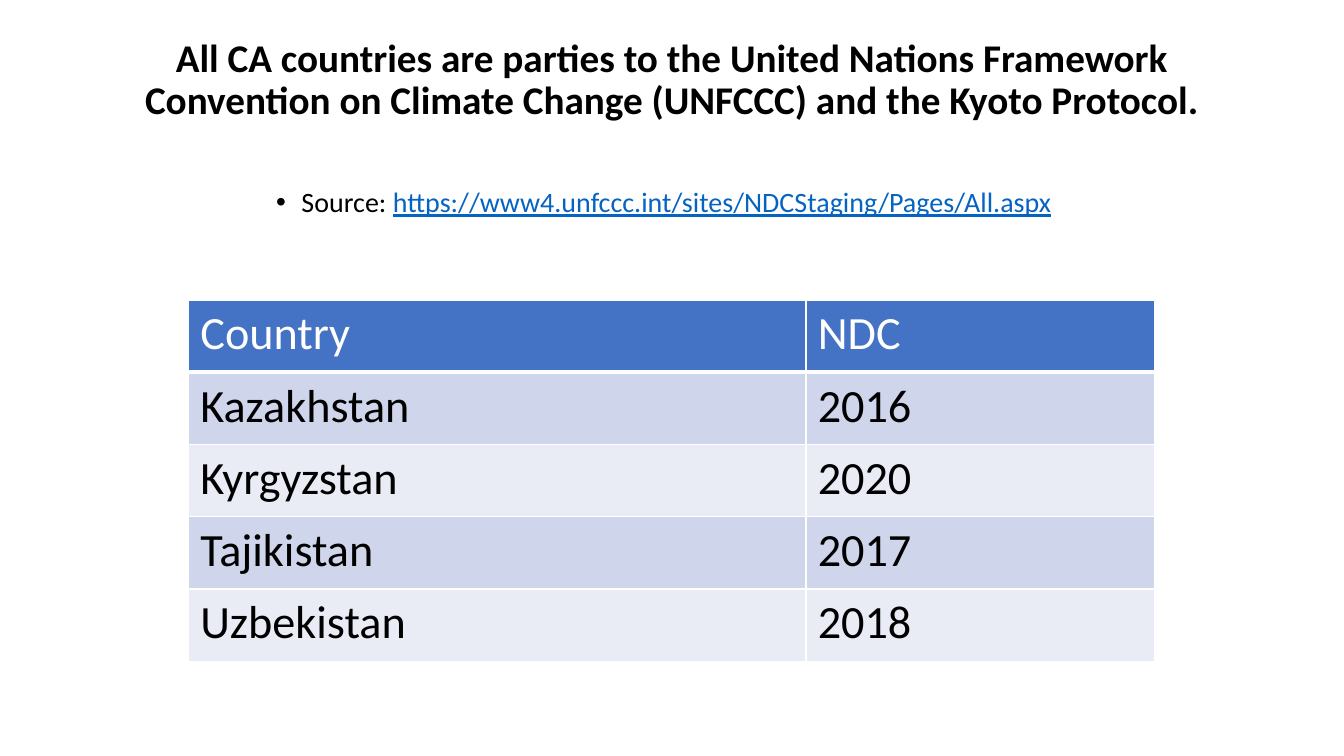
from dataclasses import dataclass

from lxml.etree import SubElement
from pptx import Presentation
from pptx.dml.color import RGBColor as RGB
from pptx.enum.text import MSO_ANCHOR as Anchor, MSO_AUTO_SIZE as AutoSize, PP_ALIGN as Align
from pptx.oxml.ns import qn
from pptx.util import Cm, Pt

TITLE = ("All CA countries are parties to the United Nations Framework "
         "Convention on Climate Change (UNFCCC) and the Kyoto Protocol.")
SOURCE = ("Source: ", "https://www4.unfccc.int/sites/NDCStaging/Pages/All.aspx")
ROWS = [
    ("Country", "NDC"),
    ("Kazakhstan", "2016"),
    ("Kyrgyzstan", "2020"),
    ("Tajikistan", "2017"),
    ("Uzbekistan", "2018"),
]


@dataclass(frozen=True)
class Theme:
    font: str = "Calibri"
    title_size: int = 28
    source_size: int = 20
    table_size: int = 33
    text: str = "000000"
    link: str = "0563C1"
    white: str = "FFFFFF"
    header: str = "4472C4"
    bands: tuple = ("CFD5EA", "E9EBF5")


THEME = Theme()
TEXT_LEFT, TEXT_WIDTH = 2.79, 28.27
TABLE_LEFT, TABLE_TOP = 4.75, 7.56
COLUMN_WIDTHS = (15.56, 8.78)
ROW_HEIGHT = 1.82
MARGIN_X, MARGIN_Y = 0.3, 0.15


def format_run(r, size, color, bold=False):
    r.font.name = THEME.font
    r.font.size = Pt(size)
    r.font.bold = bold
    r.font.color.rgb = RGB.from_string(color)


def format_paragraph(p):
    p.alignment = Align.CENTER
    p.line_spacing = 0.9


def set_bullet(p, indent):
    pPr = p._p.get_or_add_pPr()
    pPr.set("marL", "0")
    pPr.set("indent", str(-indent))
    SubElement(pPr, qn("a:buFont"), typeface="Arial")
    SubElement(pPr, qn("a:buChar"), char="•")


def set_borders(cell, bottom):
    """Draw white borders; they must come before the fill in the XML."""
    tcPr = cell._tc.get_or_add_tcPr()
    for side, width in (("L", 1), ("R", 1), ("T", 1), ("B", bottom)):
        ln = SubElement(tcPr, qn(f"a:ln{side}"), w=str(Pt(width)))
        fill = SubElement(ln, qn("a:solidFill"))
        SubElement(fill, qn("a:srgbClr"), val=THEME.white)


def add_title(s):
    title = s.shapes.title
    title.left, title.top = Cm(TEXT_LEFT), Cm(0.48)
    title.width, title.height = Cm(TEXT_WIDTH), Cm(3.1)
    tf = title.text_frame
    tf.text = TITLE
    tf.word_wrap = True
    tf.auto_size = AutoSize.NONE
    tf.vertical_anchor = Anchor.MIDDLE
    p = tf.paragraphs[0]
    format_paragraph(p)
    format_run(p.runs[0], THEME.title_size, THEME.text, bold=True)


def add_source(s):
    sp = s.shapes.add_textbox(Cm(TEXT_LEFT), Cm(4.06), Cm(TEXT_WIDTH), Cm(2.13))
    tf = sp.text_frame
    tf.word_wrap = True
    tf.vertical_anchor = Anchor.MIDDLE
    p = tf.paragraphs[0]
    set_bullet(p, Cm(0.64))
    format_paragraph(p)
    p.space_after = Pt(6)
    for text, color in zip(SOURCE, (THEME.text, THEME.link)):
        r = p.add_run()
        r.text = text
        format_run(r, THEME.source_size, color)
        r.font.underline = color == THEME.link


def add_ndc_table(s):
    table = s.shapes.add_table(
        len(ROWS), len(COLUMN_WIDTHS), Cm(TABLE_LEFT), Cm(TABLE_TOP),
        Cm(sum(COLUMN_WIDTHS)), Cm(ROW_HEIGHT * len(ROWS))).table
    for column, width in zip(table.columns, COLUMN_WIDTHS):
        column.width = Cm(width)
    for i, row in enumerate(ROWS):
        table.rows[i].height = Cm(ROW_HEIGHT)
        is_header = i == 0
        fill = THEME.header if is_header else THEME.bands[(i - 1) % 2]
        color = THEME.white if is_header else THEME.text
        for j, text in enumerate(row):
            cell = table.cell(i, j)
            cell.text = text
            cell.margin_left = cell.margin_right = Cm(MARGIN_X)
            cell.margin_top = cell.margin_bottom = Cm(MARGIN_Y)
            set_borders(cell, bottom=3 if is_header else 1)
            cell.fill.solid()
            cell.fill.fore_color.rgb = RGB.from_string(fill)
            format_run(cell.text_frame.paragraphs[0].runs[0], THEME.table_size, color)


def main():
    prs = Presentation()
    prs.slide_width, prs.slide_height = Cm(33.87), Cm(19.05)
    s = prs.slides.add_slide(prs.slide_layouts[5])
    add_title(s)
    add_source(s)
    add_ndc_table(s)
    prs.save("out.pptx")


if __name__ == "__main__":
    main()
